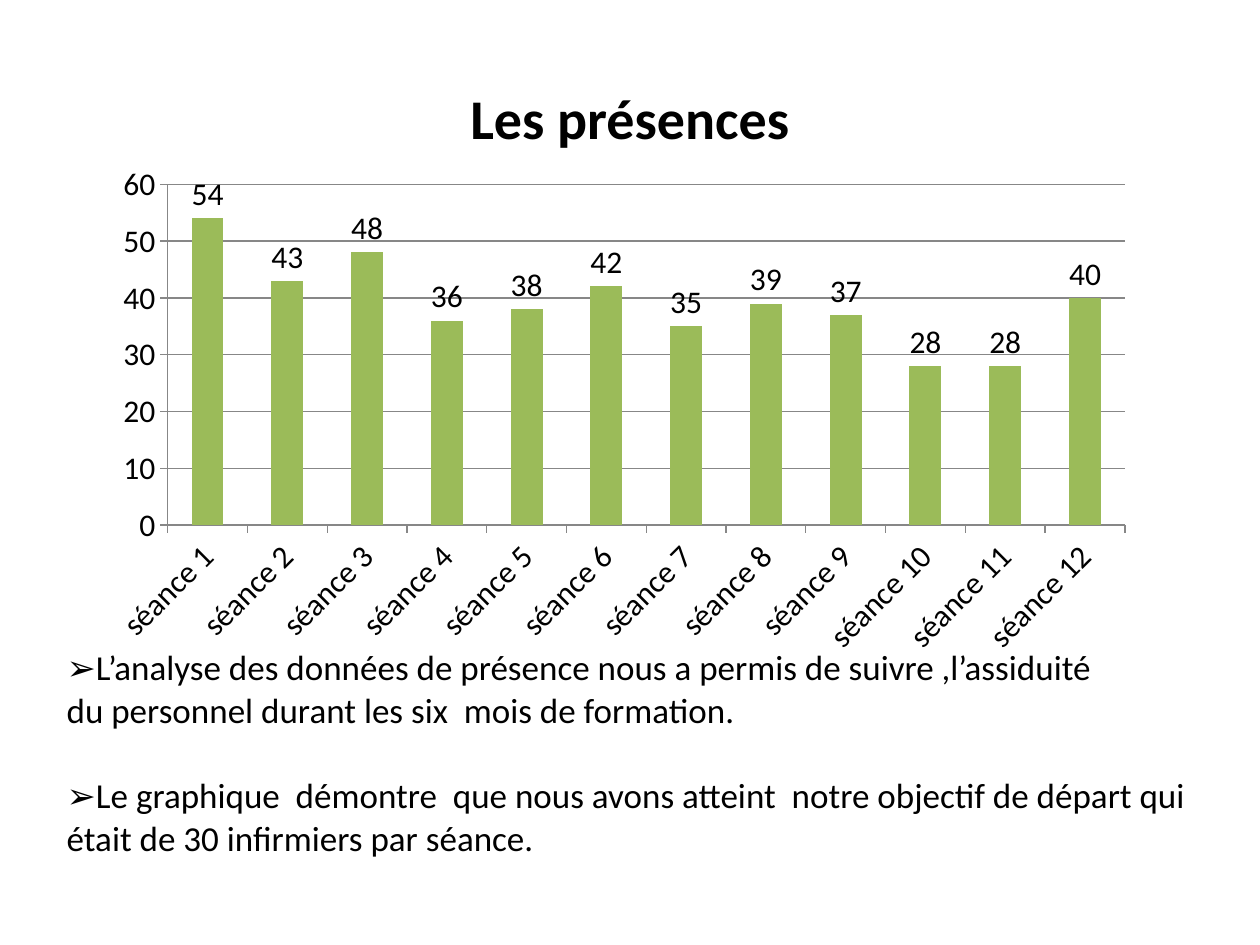
from lxml import etree
from pptx import Presentation
from pptx import util as u
from pptx.chart.data import CategoryChartData
from pptx.dml.color import RGBColor
from pptx.enum import chart as ch
from pptx.enum import text as tx
from pptx.oxml.ns import qn

FONT = "Calibri"
BLACK = RGBColor(0x00, 0x00, 0x00)
GREEN = RGBColor(0x9B, 0xBB, 0x59)
GREY = RGBColor(0x87, 0x87, 0x87)

COUNTS = (54, 43, 48, 36, 38, 42, 35, 39, 37, 28, 28, 40)

# text, has bullet, points of space above
NOTES = (
    ("L’analyse des données de présence nous a permis de suivre ,l’assiduité", True, 0),
    ("du personnel durant les six  mois de formation.", False, 0),
    ("Le graphique  démontre  que nous avons atteint  notre objectif de départ qui "
     "était de 30 infirmiers par séance.", True, 24),
)


def px(n):
    return u.Emu(round(n * 914400 / 126))


def box(*nums):
    return [px(n) for n in nums]


def style(font, size, bold=False):
    font.name = FONT
    font.size = u.Pt(size)
    font.bold = bold
    font.color.rgb = BLACK


def add_title(slide, words):
    title = slide.shapes.title
    title.left, title.top, title.width, title.height = box(63, 38, 1134, 158)
    frame = title.text_frame
    frame.text = words
    frame.vertical_anchor = tx.MSO_ANCHOR.MIDDLE
    para = frame.paragraphs[0]
    para.alignment = tx.PP_ALIGN.CENTER
    style(para.runs[0].font, 32, True)


def set_line(line):
    line.color.rgb = GREY
    line.width = u.Pt(0.75)


def add_chart(slide):
    data = CategoryChartData()
    data.categories = [f"séance {i}" for i in range(1, len(COUNTS) + 1)]
    data.add_series("Series 1", COUNTS)
    chart = slide.shapes.add_chart(
        ch.XL_CHART_TYPE.COLUMN_CLUSTERED, *box(94, 155, 1052, 510), data).chart
    chart.has_title = False
    chart.has_legend = False
    style(chart.font, 18)

    plot = chart.plots[0]
    plot.vary_by_categories = False
    plot.gap_width = 150
    fill = plot.series[0].format.fill
    fill.solid()
    fill.fore_color.rgb = GREEN
    plot.has_data_labels = True
    tags = plot.data_labels
    tags.show_value = True
    tags.position = ch.XL_LABEL_POSITION.OUTSIDE_END
    style(tags.font, 18)

    for axis in (chart.category_axis, chart.value_axis):
        axis.major_tick_mark = ch.XL_TICK_MARK.OUTSIDE
        axis.minor_tick_mark = ch.XL_TICK_MARK.NONE
        set_line(axis.format.line)
        style(axis.tick_labels.font, 18)
    body = chart.category_axis._element.find(qn("c:txPr")).find(qn("a:bodyPr"))
    body.set("rot", "-2700000")

    axis = chart.value_axis
    axis.minimum_scale, axis.maximum_scale, axis.major_unit = 0, 60, 10
    axis.has_major_gridlines = True
    set_line(axis.major_gridlines.format.line)


def clear_cell(cell):
    """Take away the fill and the four borders."""
    cell.fill.background()
    props = cell._tc.get_or_add_tcPr()
    for i, side in enumerate(("lnL", "lnR", "lnT", "lnB")):
        line = etree.Element(qn(f"a:{side}"))
        etree.SubElement(line, qn("a:noFill"))
        props.insert(i, line)


def set_bullet(para):
    props = para._p.get_or_add_pPr()
    etree.SubElement(props, qn("a:buFont")).set("typeface", "Wingdings")
    props[-1].set("typeface", "Arial")
    etree.SubElement(props, qn("a:buChar")).set("char", "➢")


def add_notes(slide):
    frame = slide.shapes.add_table(1, 1, *box(54, 641, 1150, 306))
    table = frame.table
    table.first_row = table.horz_banding = False
    table.rows[0].height = px(224)
    frame.height = px(306)
    cell = table.cell(0, 0)
    clear_cell(cell)
    body = cell.text_frame
    body.text = "\n".join(words for words, _, _ in NOTES)
    for para, (_, mark, gap) in zip(body.paragraphs, NOTES):
        para.space_before = u.Pt(gap)
        if mark:
            set_bullet(para)
        style(para.runs[0].font, 20)


def main():
    deck = Presentation()
    deck.slide_width, deck.slide_height = u.Inches(10), u.Inches(7.5)
    slide = deck.slides.add_slide(deck.slide_layouts[5])
    add_title(slide, "Les présences")
    add_chart(slide)
    add_notes(slide)
    deck.save("out.pptx")


if __name__ == "__main__":
    main()
